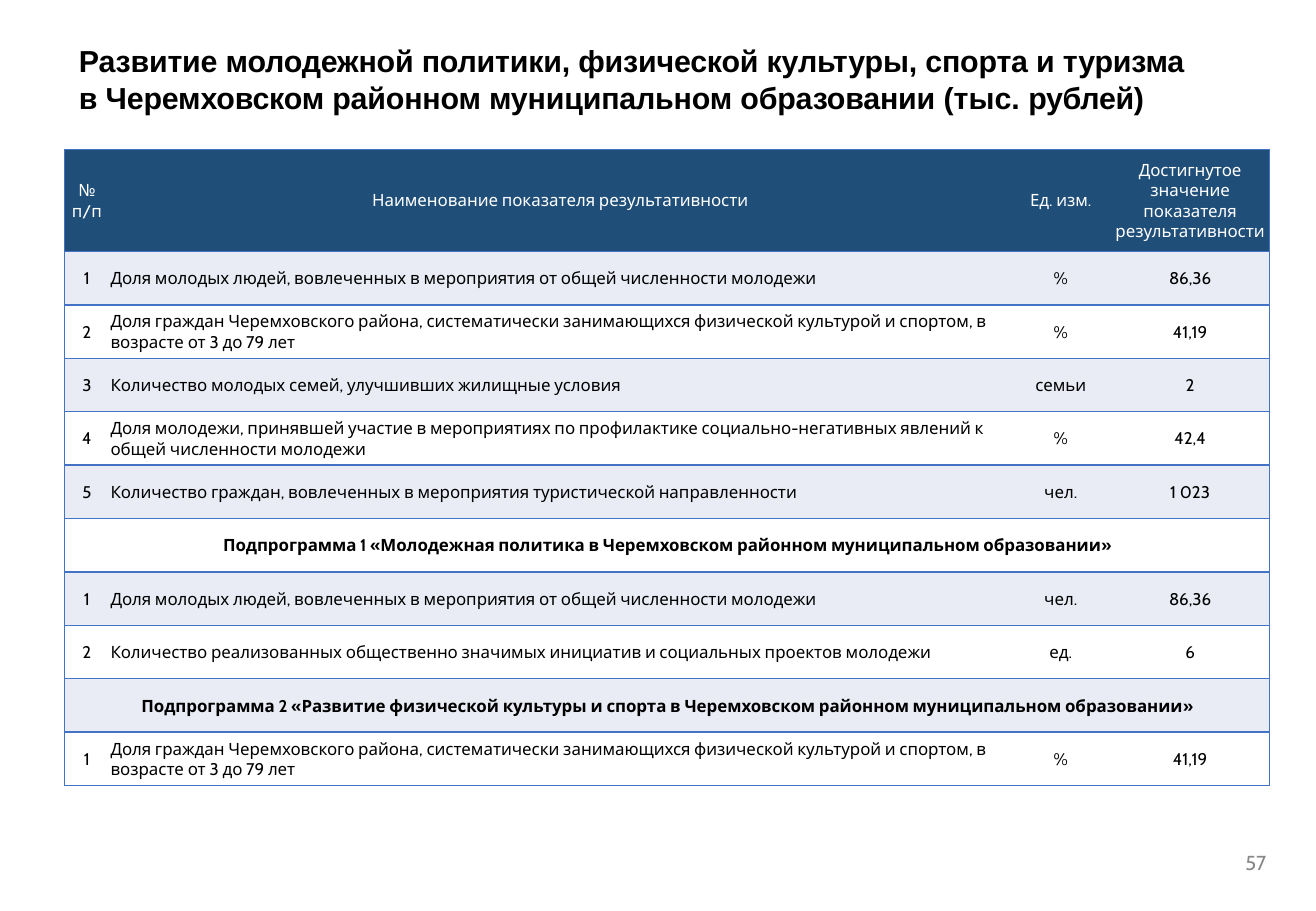
from lxml import etree
from pptx import Presentation
from pptx.dml.color import RGBColor
from pptx.enum.text import MSO_ANCHOR, MSO_AUTO_SIZE, PP_ALIGN
from pptx.oxml.ns import qn
from pptx.util import Pt

PX = 9144  # EMU in one px, 100 px to the inch
LEFT, CENTER = PP_ALIGN.LEFT, PP_ALIGN.CENTER
TOP, MIDDLE = MSO_ANCHOR.TOP, MSO_ANCHOR.MIDDLE
FIXED = MSO_AUTO_SIZE.NONE
TITLE_ONLY = 5

COLORS = {
    "header": "1F4E79",
    "band": "E9EBF5",
    "white": "FFFFFF",
    "border": "4472C4",
    "text": "000000",
    "page": "888888",
}

TITLE = [
    ("Развитие молодежной политики, физической культуры, спорта и туризма "
     "в Черемховском районном муниципальном образовании ", -10),
    ("(тыс. ", 0),
    ("рублей)", -20),
]

YOUTH_SHARE = "Доля молодых людей, вовлеченных в мероприятия от общей численности молодежи"
SPORT_SHARE = ("Доля граждан Черемховского района, систематически занимающихся "
               "физической культурой и спортом, в возрасте от 3 до 79 лет")
COLUMN_WIDTHS = [37, 742, 82, 131]
HEADER_HEIGHT, ROW_HEIGHT = 84, 44
# A row with a single entry is a subprogramme heading across all columns.
ROWS = [
    ("№ п/п", "Наименование показателя результативности", "Ед. изм.",
     "Достигнутое значение показателя результативности"),
    ("1", YOUTH_SHARE, "%", "86,36"),
    ("2", SPORT_SHARE, "%", "41,19"),
    ("3", "Количество молодых семей, улучшивших жилищные условия", "семьи", "2"),
    ("4", "Доля молодежи, принявшей участие в мероприятиях по профилактике "
          "социально-негативных явлений к общей численности молодежи", "%", "42,4"),
    ("5", "Количество граждан, вовлеченных в мероприятия туристической направленности",
     "чел.", "1 023"),
    ("Подпрограмма 1 «Молодежная политика в Черемховском районном "
     "муниципальном образовании»",),
    ("1", YOUTH_SHARE, "чел.", "86,36"),
    ("2", "Количество реализованных общественно значимых инициатив "
          "и социальных проектов молодежи", "ед.", "6"),
    ("Подпрограмма 2 «Развитие физической культуры и спорта в Черемховском "
     "районном муниципальном образовании»",),
    ("1", SPORT_SHARE, "%", "41,19"),
]


def rgb(name):
    return RGBColor.from_string(COLORS[name])


class SlideBuilder:
    def __init__(self, slide, font):
        self.slide = slide
        self.font = font

    def run(self, p, text, size, color, bold=False, font=None, spacing=0):
        """Add a run; spacing is in hundredths of a point."""
        r = p.add_run()
        r.text = text
        r.font.name = font or self.font
        r.font.size = Pt(size)
        r.font.bold = bold
        r.font.color.rgb = rgb(color)
        if spacing:
            r.font._element.set("spc", str(spacing))

    def frame(self, sp, wrap):
        tf = sp.text_frame
        tf.margin_left = tf.margin_right = tf.margin_top = tf.margin_bottom = 0
        tf.word_wrap = wrap
        tf.auto_size = FIXED
        tf.vertical_anchor = TOP
        return tf.paragraphs[0]

    def title(self, x, y, w, h, runs):
        sp = self.slide.shapes.title
        sp.left, sp.top, sp.width, sp.height = (v * PX for v in (x, y, w, h))
        p = self.frame(sp, True)
        p.alignment = LEFT
        p.space_before = Pt(0.8)
        for text, spacing in runs:
            self.run(p, text, 18, "text", True, "Arial", spacing)

    def page_number(self, x, y, w, h, text):
        sp = self.slide.shapes.add_textbox(*(v * PX for v in (x, y, w, h)))
        p = self.frame(sp, False)
        p.line_spacing = Pt(14.2)
        self.run(p, text, 12, "page", spacing=-10)

    def borders(self, cell, sides):
        """Draw the named sides (L, R, T, B) and clear the others."""
        tc_pr = cell._tc.get_or_add_tcPr()
        for i, side in enumerate("LRTB"):
            ln = etree.Element(qn(f"a:ln{side}"), w=str(Pt(1)))
            if side in sides:
                fill = etree.SubElement(ln, qn("a:solidFill"))
                etree.SubElement(fill, qn("a:srgbClr"), val=COLORS["border"])
            else:
                etree.SubElement(ln, qn("a:noFill"))
            tc_pr.insert(i, ln)

    def cell(self, cell, text, fill, color, align, bold):
        cell.fill.solid()
        cell.fill.fore_color.rgb = rgb(fill)
        cell.margin_left = cell.margin_right = cell.margin_top = PX
        cell.margin_bottom = 0
        cell.vertical_anchor = MIDDLE
        p = cell.text_frame.paragraphs[0]
        p.alignment = align
        if text:
            self.run(p, text, 10, color, bold)

    def table(self, x, y, widths, rows):
        heights = [HEADER_HEIGHT] + [ROW_HEIGHT] * (len(rows) - 1)
        size = (x, y, sum(widths), sum(heights))
        table = self.slide.shapes.add_table(
            len(rows), len(widths), *(v * PX for v in size)).table
        for col, width in zip(table.columns, widths):
            col.width = width * PX
        last = len(widths) - 1
        for i, values in enumerate(rows):
            table.rows[i].height = heights[i] * PX
            heading = len(values) == 1
            if heading:
                table.cell(i, 0).merge(table.cell(i, last))
            fill = "header" if i == 0 else "band" if i % 2 else "white"
            color = "white" if i == 0 else "text"
            for j in range(len(widths)):
                cell = table.cell(i, j)
                text = values[j] if j < len(values) else ""
                align = LEFT if i and j == 1 else CENTER
                self.cell(cell, text, fill, color, align, heading)
                left = "L" if j == 0 else ""
                right = "R" if j == last or heading else ""
                self.borders(cell, "TB" + left + right)


def main():
    prs = Presentation()
    prs.slide_width, prs.slide_height = 1083 * PX, 750 * PX
    slide = prs.slides.add_slide(prs.slide_layouts[TITLE_ONLY])
    builder = SlideBuilder(slide, "Cabin")
    builder.title(65, 35, 926, 62, TITLE)
    builder.table(53, 123, COLUMN_WIDTHS, ROWS)
    builder.page_number(1025, 700, 23, 21, "57")
    prs.save("out.pptx")


if __name__ == "__main__":
    main()
